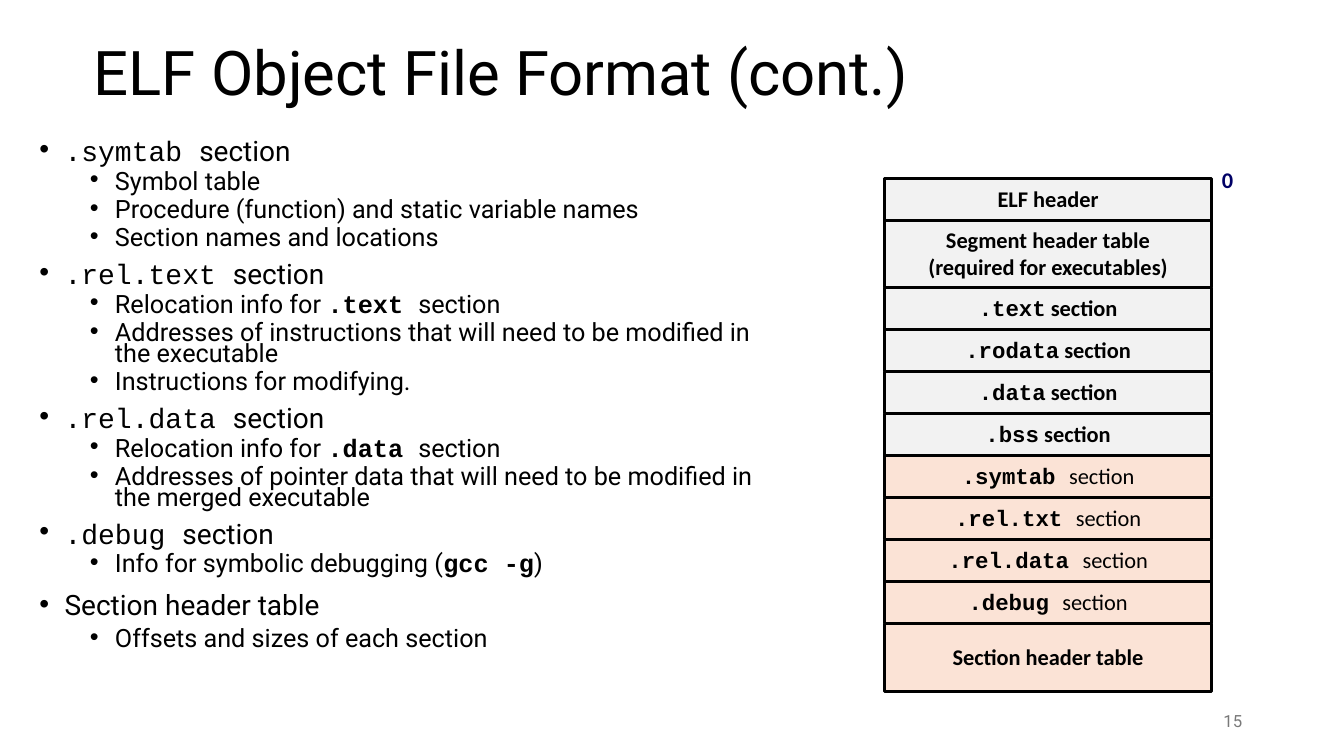
from dataclasses import dataclass

from lxml.etree import SubElement
from pptx import Presentation
from pptx.dml.color import RGBColor as Color
from pptx.enum.shapes import MSO_SHAPE as Shape
from pptx.enum.text import MSO_ANCHOR as Anchor, MSO_AUTO_SIZE as AutoSize, PP_ALIGN as Align
from pptx.oxml.ns import qn
from pptx.util import Inches, Pt


@dataclass(frozen=True)
class Theme:
    black: str = "000000"
    navy: str = "000066"
    gray: str = "797979"
    loaded: str = "F2F2F2"
    linking: str = "FBE3D6"
    sans: str = "Roboto"
    label: str = "Calibri"
    code: str = "Courier New"
    title: int = 44
    topic: int = 20
    detail: int = 18
    cell: int = 16
    number: int = 12


theme = Theme()


def add_span(para, text, font, size, color=theme.black, bold=False):
    span = para.add_run()
    span.text = text
    span.font.name = font
    span.font.size = Pt(size)
    span.font.bold = bold
    span.font.color.rgb = Color.from_string(color)


def place(box, left, top, width, height):
    box.left, box.top = Inches(left), Inches(top)
    box.width, box.height = Inches(width), Inches(height)


deck = Presentation()
deck.slide_width, deck.slide_height = Inches(13.33), Inches(7.5)
page = deck.slides.add_slide(deck.slide_layouts[1])

# Title
title = page.shapes.title
place(title, 0.83, 0.02, 11.5, 1.45)
title.text_frame.auto_size = AutoSize.NONE
title.text_frame.vertical_anchor = Anchor.MIDDLE
para = title.text_frame.paragraphs[0]
para.alignment = Align.LEFT
para.line_spacing = 0.9
add_span(para, "ELF Object File Format (cont.)", theme.sans, theme.title)

# Section descriptions: level, line spacing, then (text, is code) runs
outline = [
    (0, 0.61, [(".symtab ", True), ("section", False)]),
    (1, 0.68, [("Symbol table", False)]),
    (1, 0.68, [("Procedure (function) and static variable names", False)]),
    (1, 0.68, [("Section names and locations", False)]),
    (0, 0.61, [(".rel.text ", True), ("section", False)]),
    (1, 0.68, [("Relocation info for ", False), (".text ", True), ("section", False)]),
    (1, 0.68, [("Addresses of instructions that will need to be modified in the executable", False)]),
    (1, 0.68, [("Instructions for modifying.", False)]),
    (0, 0.61, [(".rel.data ", True), ("section", False)]),
    (1, 0.68, [("Relocation info for ", False), (".data ", True), ("section", False)]),
    (1, 0.68, [("Addresses of pointer data that will need to be modified in the merged executable", False)]),
    (0, 0.61, [(".debug ", True), ("section", False)]),
    (1, 0.68, [("Info for symbolic debugging (", False), ("gcc -g", True), (")", False)]),
    (0, 0.78, [("Section header table", False)]),
    (1, 0.78, [("Offsets and sizes of each section", False)]),
]
body = page.placeholders[1]
place(body, 0.29, 1.39, 7.59, 5.37)
frame = body.text_frame
frame.auto_size = AutoSize.NONE
for index, (level, spacing, spans) in enumerate(outline):
    para = frame.add_paragraph() if index else frame.paragraphs[0]
    para.level = level
    para.line_spacing = spacing
    para.space_before = Pt((5.6 if level else 12.5) if index else 0)
    props = para._p.get_or_add_pPr()
    props.set("marL", str(Inches(0.75 if level else 0.25)))
    props.set("indent", str(Inches(-0.25)))
    SubElement(props, qn("a:buFont"), typeface="Arial")
    SubElement(props, qn("a:buChar"), char="•")
    for text, is_code in spans:
        add_span(para, text, theme.code if is_code else theme.sans,
                 theme.detail if level else theme.topic, bold=is_code and level == 1)

# File layout diagram: code name, label lines, is linking data
sections = [
    ("", ["ELF header"], False),
    ("", ["Segment header table", "(required for executables)"], False),
    (".text", [" section"], False),
    (".rodata", [" section"], False),
    (".data", [" section"], False),
    (".bss", [" section"], False),
    (".symtab ", ["section"], True),
    (".rel.txt ", ["section"], True),
    (".rel.data ", ["section"], True),
    (".debug ", ["section"], True),
    ("", ["Section header table"], True),
]
table_left, table_width, table_height = 8.77, 3.25, 5.09
tall_rows = {1, len(sections) - 1}
tall = 0.67
short = (table_height - tall * len(tall_rows)) / (len(sections) - len(tall_rows))
top = 1.77
for index, (name, lines, is_linking) in enumerate(sections):
    height = tall if index in tall_rows else short
    cell = page.shapes.add_shape(Shape.RECTANGLE, Inches(table_left), Inches(top),
                                 Inches(table_width), Inches(height))
    cell.shadow.inherit = False
    cell.fill.solid()
    cell.fill.fore_color.rgb = Color.from_string(theme.linking if is_linking else theme.loaded)
    cell.line.color.rgb = Color.from_string(theme.black)
    cell.line.width = Pt(2)
    frame = cell.text_frame
    frame.word_wrap = False
    frame.vertical_anchor = Anchor.MIDDLE
    for number, line in enumerate(lines):
        para = frame.add_paragraph() if number else frame.paragraphs[0]
        para.alignment = Align.CENTER
        para.line_spacing = 0.94 if name else 0.98
        if name:
            add_span(para, name, theme.code, theme.cell, bold=True)
        add_span(para, line, theme.label, theme.cell, bold=not (name and is_linking))
    top += height

# Start offset beside the diagram
offset = page.shapes.add_textbox(Inches(table_left + table_width), Inches(1.61), Inches(0.31), Inches(0.37))
offset.text_frame.word_wrap = False
offset.text_frame.auto_size = AutoSize.SHAPE_TO_FIT_TEXT
para = offset.text_frame.paragraphs[0]
para.line_spacing = 0.98
add_span(para, "0", theme.label, theme.cell, theme.navy, True)

# Page number
footer = page.shapes.add_textbox(Inches(9.42), Inches(6.95), Inches(3), Inches(0.4))
footer.text_frame.word_wrap = True
footer.text_frame.vertical_anchor = Anchor.MIDDLE
para = footer.text_frame.paragraphs[0]
para.alignment = Align.RIGHT
add_span(para, "15", theme.sans, theme.number, theme.gray)

deck.save("out.pptx")
